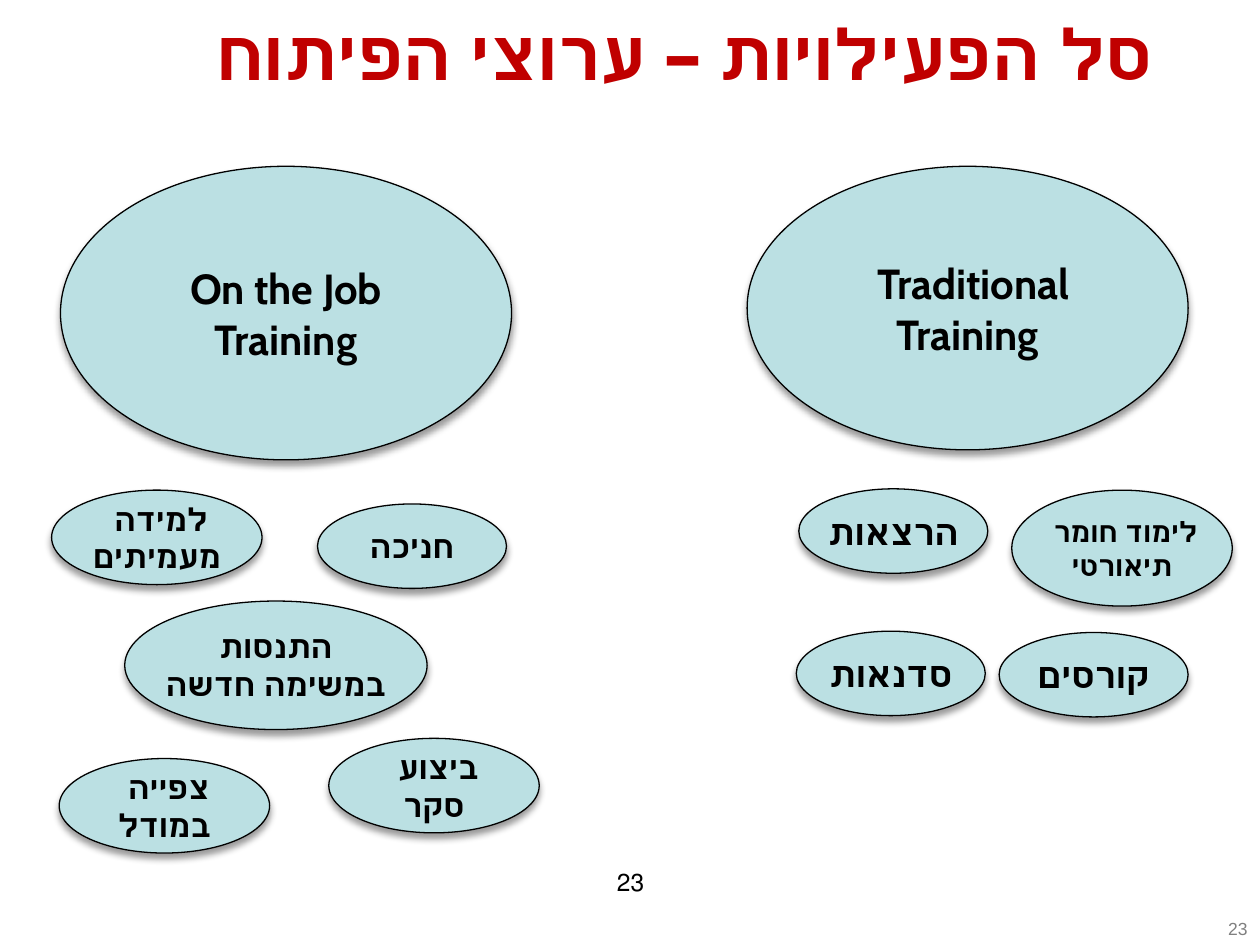
from dataclasses import dataclass

from lxml.etree import SubElement
from pptx import Presentation
from pptx.dml.color import RGBColor
from pptx.enum.shapes import MSO_SHAPE
from pptx.enum.text import MSO_ANCHOR, MSO_AUTO_SIZE, PP_ALIGN
from pptx.oxml.ns import qn
from pptx.util import Inches, Pt


@dataclass
class Bubble:
    x: float
    y: float
    w: float
    h: float
    size: int
    lines: tuple[str, ...]


SMALL = (1.5, 0.67)
MEDIUM = (1.67, 0.75)

BUBBLES = [
    Bubble(5.93, 1.32, 3.5, 2.25, 24, ("Traditional ", "Training")),
    Bubble(0.48, 1.32, 3.58, 2.33, 24, ("On the Job", "Training")),
    Bubble(6.34, 3.88, *SMALL, 20, ("הרצאות",)),
    Bubble(6.32, 5.01, *SMALL, 20, ("סדנאות",)),
    Bubble(8.03, 3.89, 1.75, 0.92, 16, ("לימוד חומר ", "תיאורטי")),
    Bubble(2.52, 4, *SMALL, 18, ("חניכה",)),
    Bubble(0.99, 4.77, 2.4, 1.02, 18, ("התנסות", "במשימה חדשה")),
    Bubble(0.47, 6.02, *MEDIUM, 18, ("צפייה ", "במודל")),
    Bubble(7.93, 5.02, *SMALL, 20, ("קורסים",)),
    Bubble(0.41, 3.89, *MEDIUM, 18, ("למידה ", "מעמיתים")),
    Bubble(2.61, 5.86, *MEDIUM, 18, ("ביצוע ", "סקר")),
]


def rgb(value: str) -> RGBColor:
    return RGBColor.from_string(value)


def set_attrs(obj, values: dict) -> None:
    for name, value in values.items():
        setattr(obj, name, value)


def write(p, text: str, color: str, align: PP_ALIGN, font: dict, rtl: bool = True) -> None:
    r = p.add_run()
    r.text = text
    set_attrs(r.font, font)
    r.font.color.rgb = rgb(color)
    p.alignment = align
    if rtl:
        p._p.get_or_add_pPr().set("rtl", "1")


def add_shadow(sp) -> None:
    sp.shadow.inherit = False
    effects = sp._element.spPr.find(qn("a:effectLst"))
    shadow = SubElement(effects, qn("a:outerShdw"), blurRad=str(Pt(4)), dist=str(Pt(3)),
                        dir="5400000", rotWithShape="0")
    color = SubElement(shadow, qn("a:srgbClr"), val="000000")
    SubElement(color, qn("a:alpha"), val="40000")


def add_bubble(s, b: Bubble) -> None:
    sp = s.shapes.add_shape(MSO_SHAPE.OVAL, Inches(b.x), Inches(b.y), Inches(b.w), Inches(b.h))
    sp.fill.solid()
    sp.fill.fore_color.rgb = rgb("BBE0E3")
    sp.line.color.rgb = rgb("000000")
    sp.line.width = Pt(0.75)
    add_shadow(sp)
    tf = sp.text_frame
    set_attrs(tf, {"word_wrap": False, "vertical_anchor": MSO_ANCHOR.MIDDLE})
    font = {"name": "Cabin", "size": Pt(b.size), "bold": True}
    for i, line in enumerate(b.lines):
        p = tf.add_paragraph() if i else tf.paragraphs[0]
        write(p, line, "000000", PP_ALIGN.CENTER, font)


def add_number(s, x: float, y: float, w: float, size: int, color: str,
               align: PP_ALIGN, anchor: MSO_ANCHOR, rtl: bool) -> None:
    sp = s.shapes.add_textbox(Inches(x), Inches(y), Inches(w), Inches(0.52))
    tf = sp.text_frame
    set_attrs(tf, {"word_wrap": True, "vertical_anchor": anchor})
    write(tf.paragraphs[0], "23", color, align, {"name": "Arial", "size": Pt(size)}, rtl)


def add_title(s, text: str) -> None:
    sp = s.shapes.title
    set_attrs(sp, {"left": Inches(0.99), "top": Inches(0.17),
                   "width": Inches(8.26), "height": Inches(0.59)})
    tf = sp.text_frame
    set_attrs(tf, {"word_wrap": True, "auto_size": MSO_AUTO_SIZE.NONE,
                   "vertical_anchor": MSO_ANCHOR.MIDDLE})
    p = tf.paragraphs[0]
    set_attrs(p, {"line_spacing": 0.85, "space_before": Pt(6)})
    write(p, text, "C00000", PP_ALIGN.RIGHT, {"name": "Arial", "size": Pt(40), "bold": True})


def main() -> None:
    prs = Presentation()
    set_attrs(prs, {"slide_width": Inches(10), "slide_height": Inches(7.5)})
    s = prs.slides.add_slide(prs.slide_layouts[5])
    add_number(s, 7.67, 6.98, 2.33, 10, "808080", PP_ALIGN.RIGHT, MSO_ANCHOR.BOTTOM, False)
    add_number(s, 3.42, 6.83, 3.17, 14, "000000", PP_ALIGN.CENTER, MSO_ANCHOR.TOP, True)
    add_title(s, "סל הפעילויות – ערוצי הפיתוח")
    for b in BUBBLES:
        add_bubble(s, b)
    prs.save("out.pptx")


if __name__ == "__main__":
    main()
